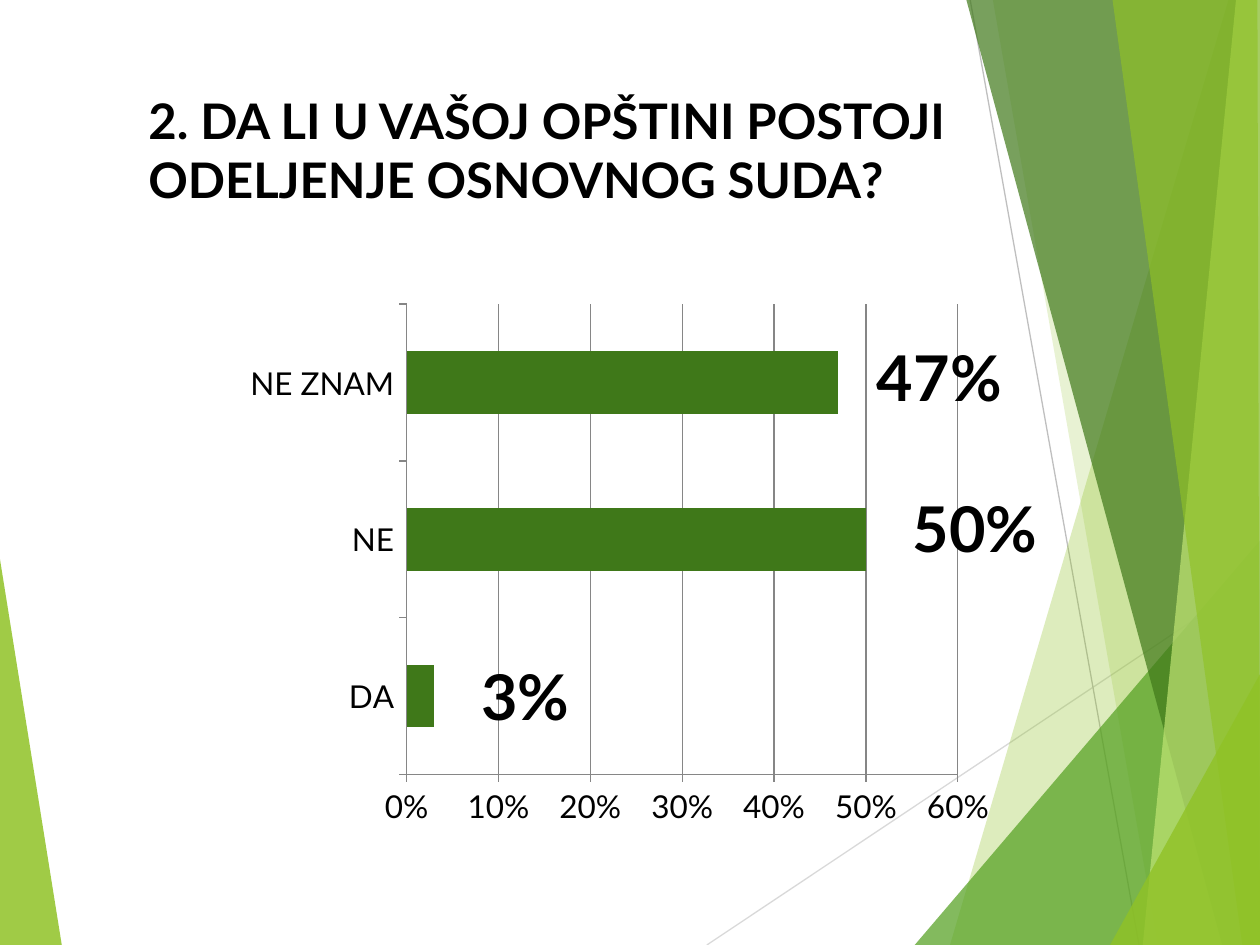
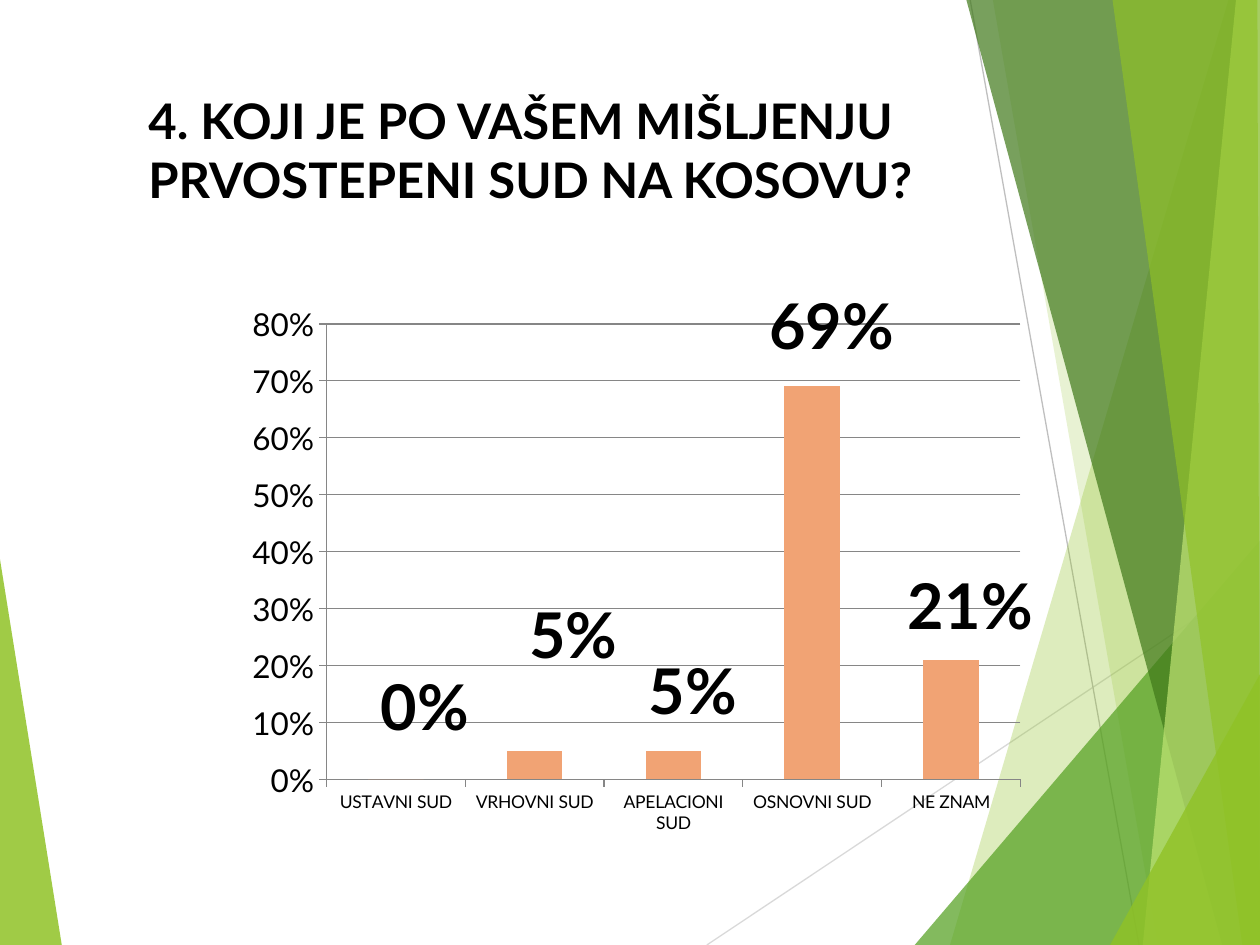
from dataclasses import dataclass

from lxml import etree
from pptx import Presentation
from pptx import util as u
from pptx.chart import data as chart_data
from pptx.dml import color as dml
from pptx.enum import chart as chart_enum, shapes, text
from pptx.oxml import ns


@dataclass(frozen=True)
class Theme:
    font: str = "Lato"
    ink: str = "000000"
    lime: str = "90C226"
    pale_lime: str = "C0E474"
    green: str = "54A021"
    forest: str = "3F7819"
    peach: str = "F1A374"
    grid: str = "868686"
    light_line: str = "D9D9D9"
    mid_line: str = "BFBFBF"
    title_size: int = 28
    label_size: int = 36
    axis_size: int = 18
    small_size: int = 10
    line_width: float = 0.75


THEME = Theme()
COLUMNS, ROWS = 10, 7.5
CELL = u.Inches(1)

LINES = [
    ((5.61, ROWS), (COLUMNS, 4.57), THEME.light_line),
    ((7.7, 0), (9.04, ROWS), THEME.mid_line),
]
LEFT_BAND = ([(0, 4.44), (0.49, ROWS), (0, ROWS)], THEME.lime, 85)
RIGHT_BANDS = [
    ([(9.75, 0), (7.54, ROWS), (COLUMNS, ROWS), (COLUMNS, 0)], THEME.lime, 30),
    ([(7.88, 0), (9.19, ROWS), (COLUMNS, ROWS), (COLUMNS, 0)], THEME.lime, 20),
    ([(7.26, ROWS), (COLUMNS, 4.29), (COLUMNS, ROWS)], THEME.green, 72),
    ([(7.67, 0), (9.7, ROWS), (COLUMNS, ROWS), (COLUMNS, 0)], THEME.forest, 70),
    ([(9.81, 0), (9.07, ROWS), (COLUMNS, ROWS), (COLUMNS, 0)], THEME.pale_lime, 70),
    ([(8.83, 0), (9.86, ROWS), (COLUMNS, ROWS), (9.98, 0)], THEME.lime, 65),
    ([(8.81, ROWS), (COLUMNS, 5.35), (COLUMNS, ROWS)], THEME.lime, 80),
]


def cells(*counts):
    return [round(count * CELL) for count in counts]


def rgb(value):
    return dml.RGBColor.from_string(value)


def set_font(font, size, bold=False, color=THEME.ink):
    font.name = THEME.font
    font.size = u.Pt(size)
    font.bold = bold
    font.color.rgb = rgb(color)


def set_line(line, color):
    line.color.rgb = rgb(color)
    line.width = u.Pt(THEME.line_width)


def add_band(page, corners, color, opacity):
    points = [cells(*corner) for corner in corners]
    builder = page.shapes.build_freeform(*points[0])
    builder.add_line_segments(points[1:], close=True)
    band = builder.convert_to_shape()
    band.shadow.inherit = False
    band.line.fill.background()
    band.fill.solid()
    band.fill.fore_color.rgb = rgb(color)
    tint = band.element.spPr.find(".//" + ns.qn("a:srgbClr"))
    etree.SubElement(tint, ns.qn("a:alpha"), val=str(opacity * 1000))


def add_line(page, start, end, color):
    line = page.shapes.add_connector(
        shapes.MSO_CONNECTOR.STRAIGHT, *cells(*start, *end)
    )
    set_line(line.line, color)
    etree.SubElement(line.element.spPr, ns.qn("a:effectLst"))


def add_backdrop(page):
    add_band(page, *LEFT_BAND)
    for line in LINES:
        add_line(page, *line)
    for band in RIGHT_BANDS:
        add_band(page, *band)


def add_text(page, words, area, size, bold=False, color=THEME.ink):
    box = page.shapes.add_textbox(*cells(*area))
    frame = box.text_frame
    frame.word_wrap = True
    frame.auto_size = text.MSO_AUTO_SIZE.SHAPE_TO_FIT_TEXT
    span = frame.paragraphs[0].add_run()
    span.text = words
    set_font(span.font, size, bold, color)


def put_layout(parent, position, **settings):
    layout = etree.Element(ns.qn("c:layout"))
    manual = etree.SubElement(layout, ns.qn("c:manualLayout"))
    for name, value in settings.items():
        etree.SubElement(manual, ns.qn(f"c:{name}"), val=str(value))
    for old in parent.findall(ns.qn("c:layout")):
        parent.remove(old)
    parent.insert(position, layout)


def style_axis(axis, size):
    set_font(axis.tick_labels.font, size)
    set_line(axis.format.line, THEME.grid)
    axis.major_tick_mark = chart_enum.XL_TICK_MARK.OUTSIDE
    axis.minor_tick_mark = chart_enum.XL_TICK_MARK.NONE


def label_bars(chart, shifts):
    plot = chart.plots[0]
    series = plot.series[0]
    series_labels = series.data_labels
    series_labels.show_value = True
    series_labels.number_format = "0%"
    series_labels.number_format_is_linked = False
    set_font(series_labels.font, THEME.label_size, bold=True)
    for index in range(len(shifts)):
        label = series.points[index].data_label
        set_font(label.font, THEME.label_size, bold=True)
        label.position = chart_enum.XL_LABEL_POSITION.OUTSIDE_END
    for label, (x, y) in zip(chart.element.iter(ns.qn("c:dLbl")), shifts):
        put_layout(label, 1, x=x, y=y)
    for leader in chart.element.iter(ns.qn("c:showLeaderLines")):
        leader.set("val", "0")


def add_bars(page, kind, area, answers, color, top, plot_area, category_size):
    table = chart_data.CategoryChartData(number_format="0%")
    table.categories = [name for name, _, _ in answers]
    table.add_series("Series 1", [share for _, share, _ in answers])
    chart = page.shapes.add_chart(kind, *cells(*area), table).chart
    chart.has_legend = False
    chart.has_title = False
    set_font(chart.font, THEME.axis_size)

    style_axis(chart.category_axis, category_size)
    scale = chart.value_axis
    style_axis(scale, THEME.axis_size)
    scale.minimum_scale, scale.maximum_scale, scale.major_unit = 0, top, 0.1
    scale.tick_labels.number_format = "0%"
    scale.tick_labels.number_format_is_linked = False
    scale.has_major_gridlines = True
    set_line(scale.major_gridlines.format.line, THEME.grid)

    plot = chart.plots[0]
    plot.gap_width = 150
    plot.vary_by_categories = False
    fill = plot.series[0].format.fill
    fill.solid()
    fill.fore_color.rgb = rgb(color)
    label_bars(chart, [shift for _, _, shift in answers])
    x, y, w, h = plot_area
    put_layout(
        chart.element.find(".//" + ns.qn("c:plotArea")), 0,
        layoutTarget="inner", xMode="edge", yMode="edge", x=x, y=y, w=w, h=h,
    )


def add_question(deck, title, **bars):
    page = deck.slides.add_slide(deck.slide_layouts[6])
    add_backdrop(page)
    add_bars(page, **bars)
    add_text(page, title, (1.08, 0.67, 8.5, 1.04), THEME.title_size, bold=True)


def main():
    deck = Presentation()
    deck.slide_width, deck.slide_height = cells(COLUMNS, ROWS)
    add_question(
        deck,
        "2. DA LI U VAŠOJ OPŠTINI POSTOJI ODELJENJE OSNOVNOG SUDA?",
        kind=chart_enum.XL_CHART_TYPE.BAR_CLUSTERED,
        area=(1.58, 2.25, 6.67, 4.44),
        answers=[
            ("DA", 0.03, (0.05, 0)),
            ("NE", 0.5, (0.05, -0.02)),
            ("NE ZNAM", 0.47, (0.04, -0.01)),
        ],
        color=THEME.forest,
        top=0.6,
        plot_area=(0.247, 0.037, 0.656, 0.841),
        category_size=THEME.axis_size,
    )
    add_question(
        deck,
        "4. KOJI JE PO VAŠEM MIŠLJENJU PRVOSTEPENI SUD NA KOSOVU?",
        kind=chart_enum.XL_CHART_TYPE.COLUMN_CLUSTERED,
        area=(1.25, 2, 7.67, 4.92),
        answers=[
            ("USTAVNI SUD", 0, (0.03, -0.05)),
            ("VRHOVNI SUD", 0.05, (0.04, -0.12)),
            ("APELACIONI SUD", 0.05, (0.02, -0.03)),
            ("OSNOVNI SUD", 0.69, (0.02, -0.03)),
            ("NE ZNAM", 0.21, (0.02, -0.02)),
        ],
        color=THEME.peach,
        top=0.8,
        plot_area=(0.175, 0.116, 0.718, 0.735),
        category_size=THEME.small_size,
    )
    deck.save("out.pptx")


if __name__ == "__main__":
    main()
